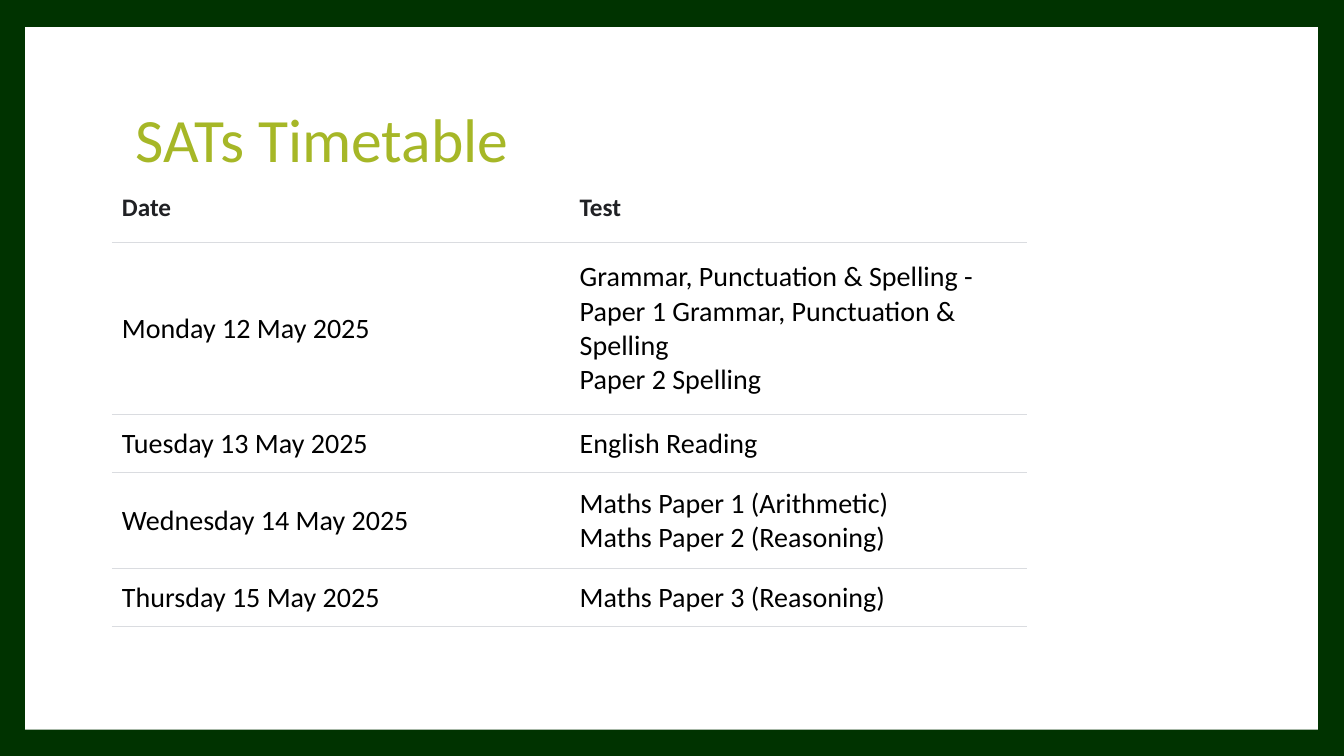
from dataclasses import dataclass

from lxml.etree import SubElement
from pptx import Presentation
from pptx.dml.color import RGBColor
from pptx.enum.shapes import MSO_SHAPE
from pptx.enum.text import MSO_ANCHOR
from pptx.oxml.ns import qn
from pptx.slide import Slide
from pptx.table import Table, _Cell
from pptx.text.text import TextFrame
from pptx.util import Inches, Pt

GREEN = RGBColor(0x00, 0x33, 0x00)
WHITE = RGBColor(0xFF, 0xFF, 0xFF)
LIME = RGBColor(0xA6, 0xB7, 0x27)
DARK = RGBColor(0x20, 0x21, 0x24)
BLACK = RGBColor(0x00, 0x00, 0x00)
GREY = RGBColor(0xDA, 0xDC, 0xE0)


@dataclass
class Style:
    size: int
    color: RGBColor
    bold: bool = False


@dataclass
class Row:
    date: str
    tests: list[str]
    height: float


TITLE = Style(44, LIME)
HEAD = Style(18, DARK, True)
BODY = Style(20, BLACK)

ROWS = [
    Row("Date", ["Test"], 0.58),
    Row("Monday 12 May 2025", [
        "Grammar, Punctuation & Spelling - Paper 1 Grammar, Punctuation & Spelling",
        "Paper 2 Spelling",
    ], 1.7),
    Row("Tuesday 13 May 2025", ["English Reading"], 0.58),
    Row("Wednesday 14 May 2025", [
        "Maths Paper 1 (Arithmetic)",
        "Maths Paper 2 (Reasoning)",
    ], 0.95),
    Row("Thursday 15 May 2025", ["Maths Paper 3 (Reasoning)"], 0.58),
]


def write(frame: TextFrame, lines: list[str], style: Style) -> None:
    for i, line in enumerate(lines):
        para = frame.add_paragraph() if i else frame.paragraphs[0]
        run = para.add_run()
        run.text = line
        font = run.font
        font.name = "Calibri"
        font.size = Pt(style.size)
        font.bold = style.bold
        font.color.rgb = style.color


def set_edge(cell: _Cell, side: str, shown: bool) -> None:
    props = cell._tc.get_or_add_tcPr()
    edge = SubElement(props, qn(f"a:ln{side}"), w=str(Pt(0.75)))
    if shown:
        fill = SubElement(edge, qn("a:solidFill"))
        SubElement(fill, qn("a:srgbClr"), val=str(GREY))
    else:
        SubElement(edge, qn("a:noFill"))


def fill_cell(cell: _Cell, lines: list[str], head: bool) -> None:
    for side in "LRTB":
        set_edge(cell, side, side == "B" or (side == "T" and not head))
    cell.fill.solid()
    cell.fill.fore_color.rgb = WHITE
    cell.margin_left = cell.margin_right = Inches(0.1)
    cell.margin_top = cell.margin_bottom = Inches(0.08)
    cell.vertical_anchor = MSO_ANCHOR.TOP if head else MSO_ANCHOR.MIDDLE
    write(cell.text_frame, lines, HEAD if head else BODY)


def add_panel(slide: Slide) -> None:
    panel = slide.shapes.add_shape(
        MSO_SHAPE.RECTANGLE, Inches(0.25), Inches(0.27), Inches(12.82), Inches(6.97))
    panel.shadow.inherit = False
    panel.fill.solid()
    panel.fill.fore_color.rgb = WHITE
    panel.line.fill.background()


def add_title(slide: Slide) -> None:
    box = slide.shapes.add_textbox(
        Inches(1.25), Inches(0.67), Inches(10.8), Inches(1.48))
    frame = box.text_frame
    frame.word_wrap = True
    frame.vertical_anchor = MSO_ANCHOR.MIDDLE
    write(frame, ["SATs Timetable"], TITLE)
    frame.paragraphs[0].line_spacing = 0.9


def add_dates(slide: Slide) -> None:
    total = sum(row.height for row in ROWS)
    table: Table = slide.shapes.add_table(
        len(ROWS), 2, Inches(1.11), Inches(1.83), Inches(9.08), Inches(total)).table
    table.horz_banding = False
    for i, row in enumerate(ROWS):
        table.rows[i].height = Inches(row.height)
        for j, lines in enumerate(([row.date], row.tests)):
            fill_cell(table.cell(i, j), lines, i == 0)


def main() -> None:
    deck = Presentation()
    deck.slide_width = Inches(13.33)
    deck.slide_height = Inches(7.5)
    slide = deck.slides.add_slide(deck.slide_layouts[6])

    # Green frame around a white panel
    back = slide.background.fill
    back.solid()
    back.fore_color.rgb = GREEN
    add_panel(slide)

    # Title and timetable
    add_title(slide)
    add_dates(slide)
    deck.save("out.pptx")


if __name__ == "__main__":
    main()
